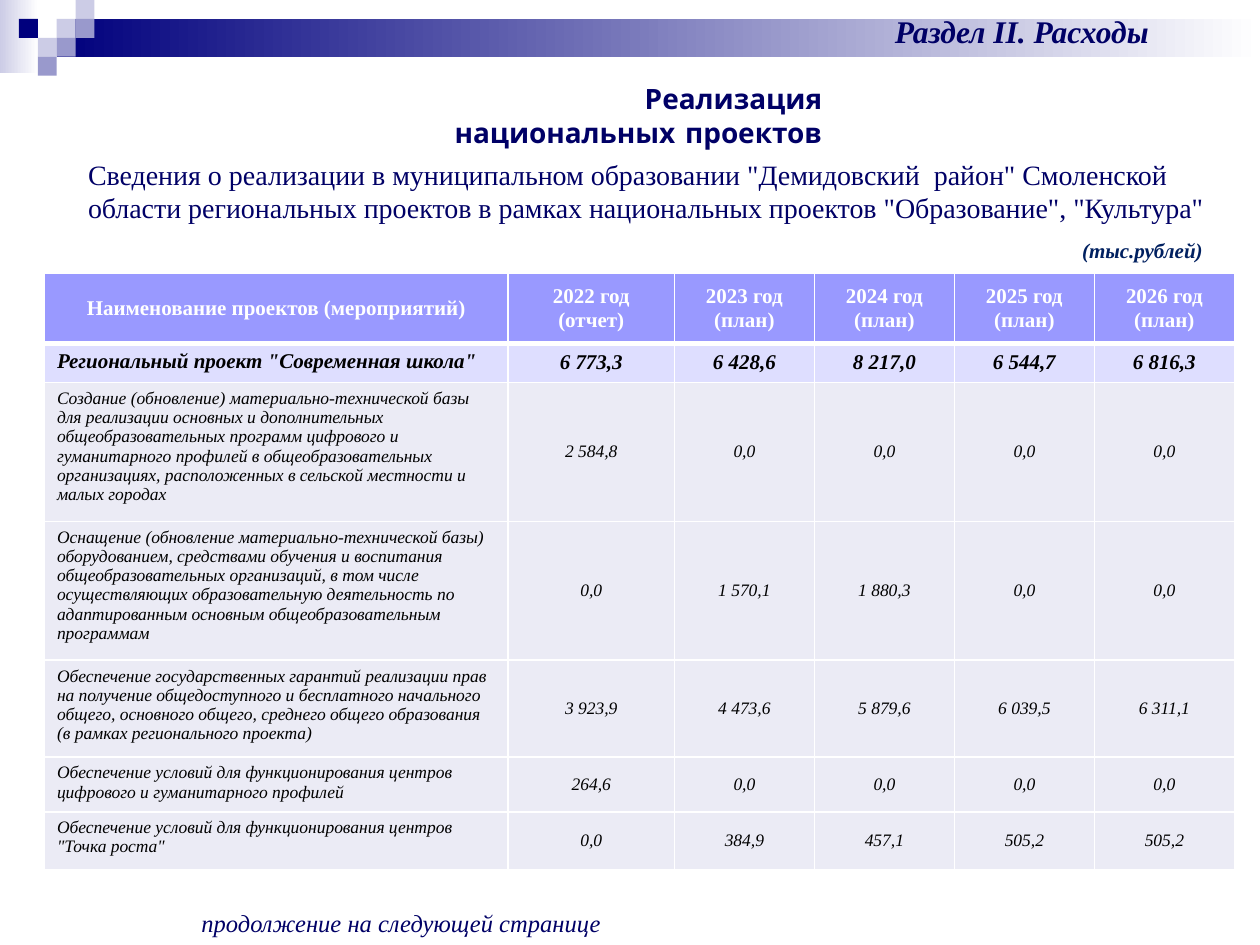
import pptx
import pptx.util
import pptx.dml.color
import pptx.enum.shapes
import pptx.enum.text
import pptx.oxml
import pptx.oxml.ns

Pt = pptx.util.Pt
ALIGN = pptx.enum.text.PP_ALIGN
ANCHOR = pptx.enum.text.MSO_ANCHOR

HUES = {
    "navy": "00007D",
    "mid": "9999CC",
    "pale": "CCCCE6",
    "white": "FFFFFF",
    "black": "000000",
    "ink": "000066",
    "unit": "002060",
    "head": "9999FF",
    "total": "DEDEFF",
    "body": "EBEBF5",
}


def rgb(name):
    return pptx.dml.color.RGBColor.from_string(HUES[name])


class Page:
    face = "Times New Roman"

    def __init__(self, slide):
        self.slide = slide

    def style(self, frame, size, hue, bold=False, slant=False, align=ALIGN.LEFT, face=None):
        for para in frame.paragraphs:
            para.alignment = align
            font = para.font
            font.name = face or self.face
            font.size = Pt(size)
            font.bold = bold
            font.italic = slant
            font.color.rgb = rgb(hue)

    def rect(self, x, y, w, h, hue, fade=None):
        kind = pptx.enum.shapes.MSO_SHAPE.RECTANGLE
        shape = self.slide.shapes.add_shape(kind, Pt(x), Pt(y), Pt(w), Pt(h))
        shape.shadow.inherit = False
        shape.line.fill.background()
        if fade:
            shape.fill.gradient()
            shape.fill.gradient_angle = 0
            for stop, name in zip(shape.fill.gradient_stops, (hue, fade)):
                stop.color.rgb = rgb(name)
        else:
            shape.fill.solid()
            shape.fill.fore_color.rgb = rgb(hue)

    def text(self, x, y, w, h, words, size, hue="ink", wrap=True, **look):
        frame = self.slide.shapes.add_textbox(Pt(x), Pt(y), Pt(w), Pt(h)).text_frame
        frame.word_wrap = wrap
        frame.text = words
        self.style(frame, size, hue, **look)

    def edge(self, cell, sides):
        props = cell._tc.get_or_add_tcPr()
        for spot, (side, width) in enumerate(sides.items()):
            line = pptx.oxml.parse_xml(
                f'<a:ln{side} {pptx.oxml.ns.nsdecls("a")} w="{Pt(width)}"><a:solidFill>'
                f'<a:srgbClr val="{HUES["white"]}"/></a:solidFill></a:ln{side}>'
            )
            props.insert(spot, line)

    def table(self, x, y, cols, highs, rows):
        grid = self.slide.shapes.add_table(
            len(rows), len(cols), Pt(x), Pt(y), Pt(sum(cols)), Pt(sum(highs))
        ).table
        grid.horz_banding = False
        for col, wide in zip(grid.columns, cols):
            col.width = Pt(wide)
        for r, (high, row) in enumerate(zip(highs, rows)):
            grid.rows[r].height = Pt(high)
            fill = ("head", "total")[r] if r < 2 else "body"
            for c, words in enumerate(row):
                cell = grid.cell(r, c)
                cell.text = words
                mid = r == 0 or c > 0
                cell.vertical_anchor = ANCHOR.MIDDLE if mid else ANCHOR.TOP
                self.style(
                    cell.text_frame,
                    12 if r < 2 else 10,
                    "black" if r else "white",
                    bold=r < 2,
                    slant=r > 0,
                    align=ALIGN.CENTER if mid else ALIGN.LEFT,
                )
                cell.fill.solid()
                cell.fill.fore_color.rgb = rgb(fill)
                top, low = 3 if r == 1 else 1, 1 if r else 3
                self.edge(cell, {"L": 1, "R": 1, "T": top, "B": low})


ROWS = [
    ["Наименование проектов (мероприятий)", "2022 год\n(отчет)"]
    + [f"{year} год\n(план)" for year in range(2023, 2026)]
    + ["2026 год (план)"],
    ['Региональный проект "Современная школа"',
     "6 773,3", "6 428,6", "8 217,0", "6 544,7", "6 816,3"],
    ["Создание (обновление) материально-технической базы для реализации основных и "
     "дополнительных общеобразовательных программ цифрового и гуманитарного профилей в "
     "общеобразовательных организациях, расположенных в сельской местности и малых городах",
     "2 584,8", "0,0", "0,0", "0,0", "0,0"],
    ["Оснащение (обновление материально-технической базы) оборудованием, средствами обучения "
     "и воспитания общеобразовательных организаций, в том числе осуществляющих "
     "образовательную деятельность по адаптированным основным общеобразовательным программам",
     "0,0", "1 570,1", "1 880,3", "0,0", "0,0"],
    ["Обеспечение государственных гарантий реализации прав на получение общедоступного и "
     "бесплатного начального общего, основного общего, среднего общего образования "
     "(в рамках регионального проекта)",
     "3 923,9", "4 473,6", "5 879,6", "6 039,5", "6 311,1"],
    ["Обеспечение условий для функционирования центров цифрового и гуманитарного профилей",
     "264,6", "0,0", "0,0", "0,0", "0,0"],
    ['Обеспечение условий для функционирования центров "Точка роста"',
     "0,0", "384,9", "457,1", "505,2", "505,2"],
]

TILES = [
    (3, 1, "pale"), (4, 0, "pale"), (4, 1, "mid"), (2, 2, "pale"),
    (1, 1, "navy"), (3, 2, "mid"), (2, 3, "mid"),
]


def main():
    deck = pptx.Presentation()
    deck.slide_width, deck.slide_height = Pt(720), Pt(540)
    page = Page(deck.slides.add_slide(deck.slide_layouts[6]))

    page.rect(0, 0, 22, 42, "pale", "white")
    page.rect(32.4, 10.8, 687.6, 21.6, "navy", "white")
    side = 10.8
    for col, row, hue in TILES:
        page.rect(col * side, row * side, side, side, hue)

    page.text(450.7, 3.6, 266.4, 28.8, "Раздел II. Расходы", 18,
              bold=True, slant=True, align=ALIGN.CENTER)
    page.text(241, 43.2, 236, 26.6, "Реализация национальных проектов", 16,
              bold=True, align=ALIGN.RIGHT, face="Comic Neue")
    page.table(25.4, 156.2, [265, 95] + [80] * 4, [40, 22.3, 79.4, 79.4, 55.4, 31, 33], ROWS)
    page.text(43.2, 86.4, 674, 46,
              'Сведения о реализации в муниципальном образовании "Демидовский  район" Смоленской '
              'области региональных проектов в рамках национальных проектов "Образование", '
              '"Культура"', 16)
    page.text(108, 515.5, 504.7, 24.5, "продолжение на следующей странице", 14, slant=True)
    page.text(611.3, 132.5, 84.2, 21.6, "(тыс.рублей)", 12, "unit",
              wrap=False, bold=True, slant=True)

    deck.save("out.pptx")


if __name__ == "__main__":
    main()
